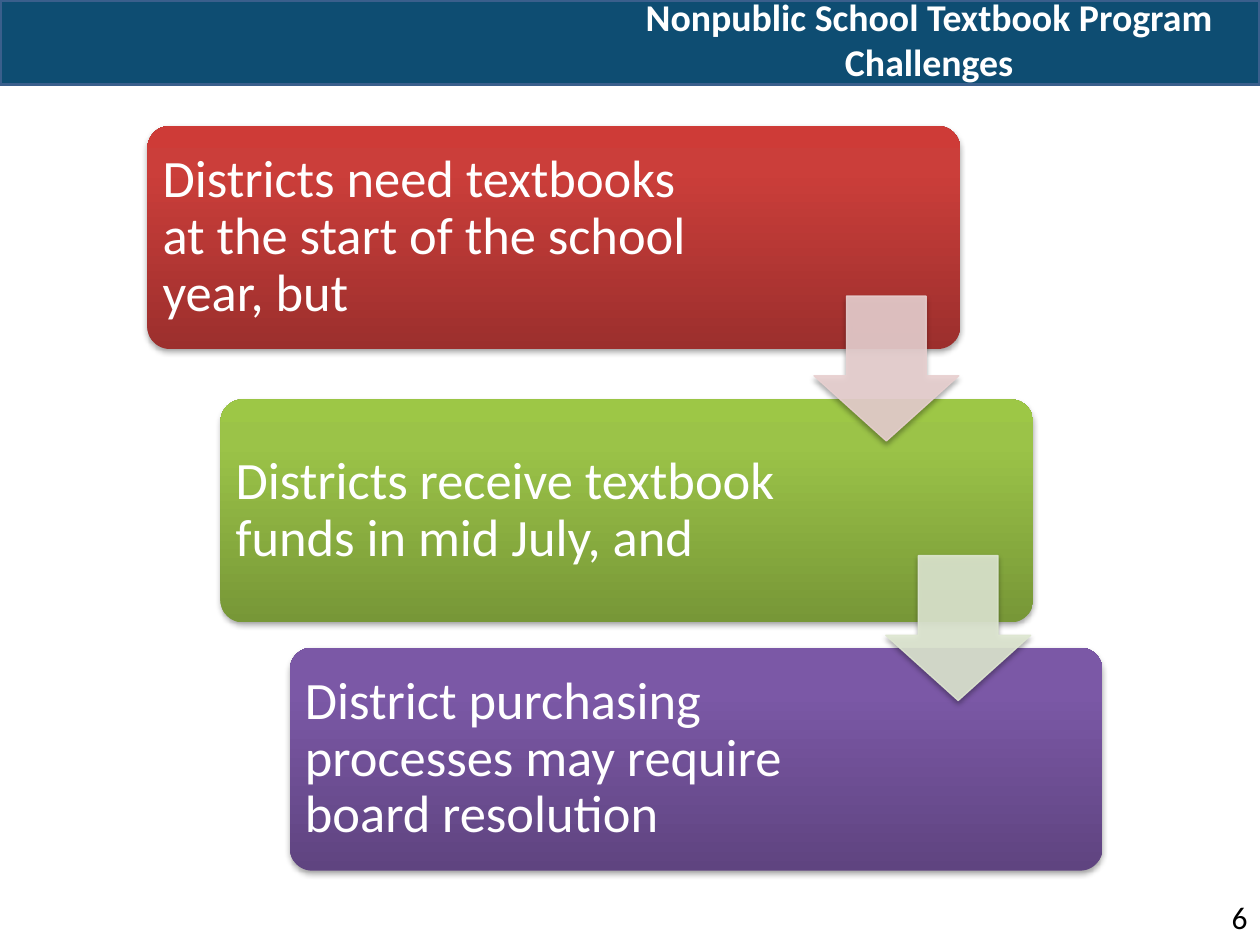
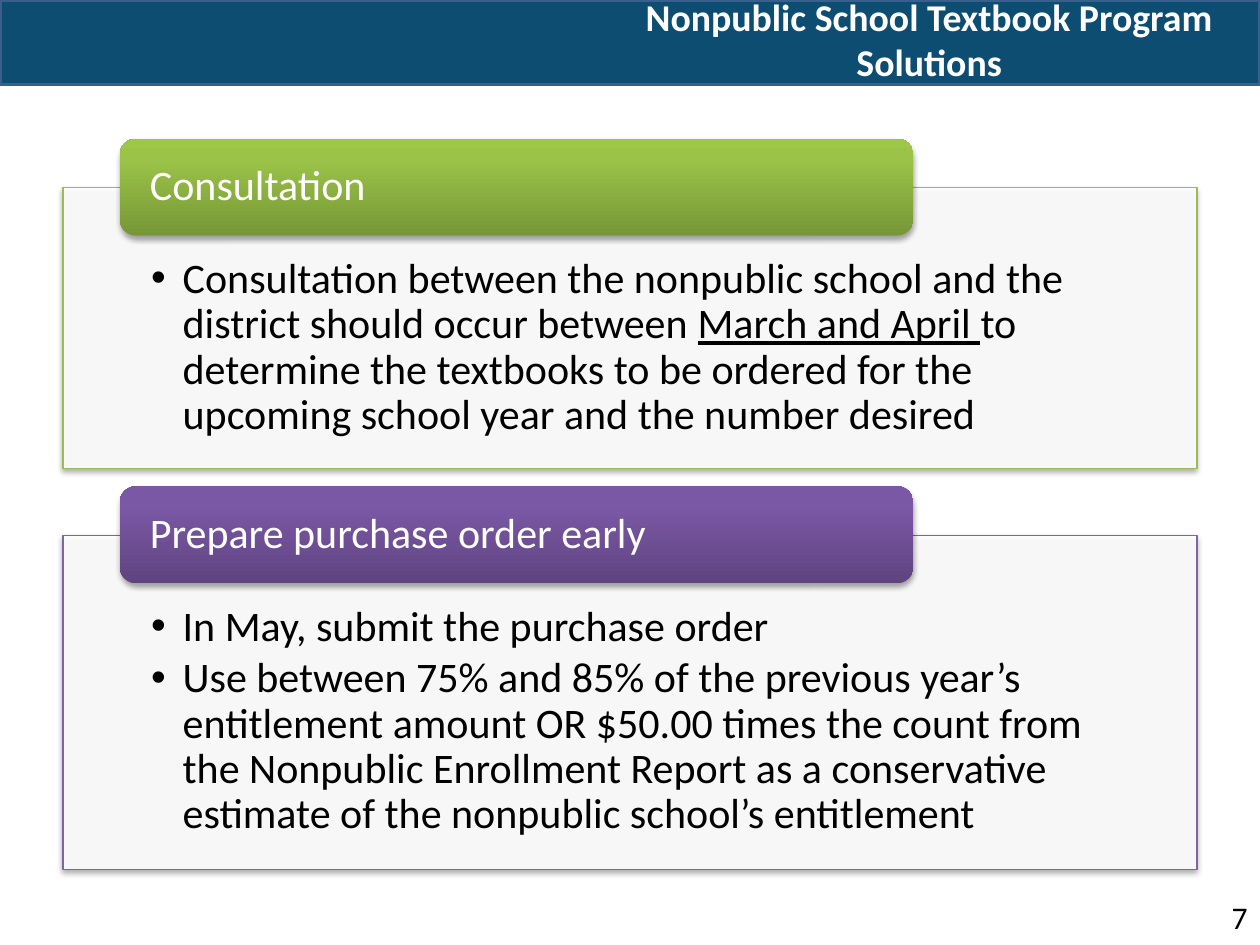
from lxml.etree import SubElement as Sub
from pptx import Presentation
from pptx.dml.color import RGBColor as Rgb
from pptx.enum.shapes import MSO_SHAPE as Kind
from pptx.enum.text import MSO_ANCHOR as Anchor, MSO_AUTO_SIZE as Auto, PP_ALIGN as Align
from pptx.oxml.ns import qn
from pptx.util import Inches, Pt

HUES = {
    "band": "0E4D72", "rim": "3A5F8C", "white": "FFFFFF", "black": "000000",
    "pink": "E8D0D0", "mint": "DEE7D1", "leaf": "9BBB59", "plum": "8064A2",
}
FADES = {
    "red": ("9C2F2D", "CB3E3A", "CE3B37"),
    "green": ("779737", "9BC348", "9DC746"),
    "purple": ("5F4480", "7B58A6", "7C57A8"),
}
COLS, ROWS = 40, 30


def kid(node, tag, **attrs):
    return Sub(node, qn(tag), {k: str(v) for k, v in attrs.items()})


def write(frame, text, size=24, hue="black", bold=None, align=None, anchor=Anchor.TOP,
          pad=(0.1, 0.05, 0.1, 0.05), lead=None, after=0, bullet=False):
    frame.word_wrap = True
    frame.auto_size = Auto.NONE
    frame.vertical_anchor = anchor
    (frame.margin_left, frame.margin_top,
     frame.margin_right, frame.margin_bottom) = map(Inches, pad)
    for i, parts in enumerate([text] if isinstance(text, str) else text):
        para = frame.add_paragraph() if i else frame.paragraphs[0]
        para.alignment, para.line_spacing = align, lead
        para.space_before, para.space_after = Pt(0), Pt(after)
        if bullet:
            props = para._p.get_or_add_pPr()
            props.set("marL", str(Inches(0.25)))
            props.set("indent", str(-Inches(0.25)))
            kid(props, "a:buChar", char="•")
        for j, part in enumerate([parts] if isinstance(parts, str) else parts):
            for k, line in enumerate(part.split("\v")):
                if k:
                    para.add_line_break()
                run = para.add_run()
                run.text = line
                font = run.font
                font.name, font.size, font.bold = "Calibri", Pt(size), bold
                font.color.rgb = Rgb.from_string(HUES[hue])
                if j % 2:
                    font.underline = True


class Deck:
    def __init__(self, first):
        self.prs = Presentation()
        self.prs.slide_width, self.prs.slide_height = Inches(10), Inches(7.5)
        self.num = first
        self.slide = None

    def at(self, x, y, w, h):
        wide, high = self.prs.slide_width / COLS, self.prs.slide_height / ROWS
        return [round(v) for v in (x * wide, y * high, w * wide, h * high)]

    def page(self, layout, topic):
        self.slide = self.prs.slides.add_slide(self.prs.slide_layouts[layout])
        title = self.slide.shapes.title
        self.move(title, 19, 0, 21, 2.48)
        write(title.text_frame, f"Nonpublic School Textbook Program\v{topic}", size=21.6,
              hue="white", bold=True, align=Align.CENTER, anchor=Anchor.MIDDLE)
        band = self.shape(Kind.RECTANGLE, 0, 0, 40, 2.68, fill="band", line="rim",
                          width=2, shade=False)
        title._element.addprevious(band._element)
        self.text(str(self.num), 37.32, 28.32, 2.68, 1.6, size=18, align=Align.RIGHT)
        self.num += 1

    def move(self, item, *box):
        item.left, item.top, item.width, item.height = self.at(*box)

    def text(self, text, *box, **fmt):
        write(self.slide.shapes.add_textbox(*self.at(*box)).text_frame, text, **fmt)

    def shape(self, kind, *box, fill, line=None, width=0.75, adj=(), alpha=None,
              dim=False, shade=True):
        item = self.slide.shapes.add_shape(kind, *self.at(*box))
        for i, val in enumerate(adj):
            item.adjustments[i] = val
        props = item._element.spPr
        if fill in FADES:
            item.fill.gradient()
            item.fill.gradient_angle = 90
            stops = props.find(".//" + qn("a:gsLst"))
            stops.clear()
            for pos, tone in zip((0, 80, 100), FADES[fill]):
                kid(kid(stops, "a:gs", pos=pos * 1000), "a:srgbClr", val=tone)
        else:
            item.fill.solid()
            item.fill.fore_color.rgb = Rgb.from_string(HUES[fill])
        if alpha:
            kid(props.find(".//" + qn("a:srgbClr")), "a:alpha", val=alpha * 1000)
        if line:
            item.line.color.rgb = Rgb.from_string(HUES[line])
            item.line.width = Pt(width)
            if dim:
                kid(item.line._ln.find(".//" + qn("a:srgbClr")), "a:alpha", val=alpha * 1000)
        else:
            item.line.fill.background()
        item.shadow.inherit = False
        if shade:
            cast = kid(props.find(qn("a:effectLst")), "a:outerShdw", blurRad=Pt(3.1),
                       dist=Pt(1.8), dir=5400000, rotWithShape=0)
            kid(kid(cast, "a:srgbClr", val=HUES["black"]), "a:alpha", val=35000)
        return item

    def step(self, text, x, y, fill, span):
        self.shape(Kind.ROUNDED_RECTANGLE, x, y, 25.8, 7.08, fill=fill, adj=[0.1])
        self.text(text, x, y, span, 7.08, size=30, hue="white", anchor=Anchor.MIDDLE,
                  pad=[0.12] * 4, lead=0.9)

    def arrow(self, x, y, hue):
        self.shape(Kind.DOWN_ARROW, x, y, 4.6, 4.6, fill=hue, line=hue,
                   adj=(0.55, 0.45), alpha=90, dim=True)

    def panel(self, slot, head, items, y, high, fill, line):
        box = 2, y, 36, high
        back = self.shape(Kind.RECTANGLE, *box, fill="white", line=line, alpha=90)
        body = self.slide.placeholders[slot]
        self.move(body, *box)
        write(body.text_frame, items, pad=(0.7, 0.55, 0.7, 0.19), lead=0.9,
              after=3.6, bullet=True)
        back._element.addnext(body._element)
        tab = 3.8, y - 1.56, 25.2, 3.08
        self.shape(Kind.ROUNDED_RECTANGLE, *tab, fill=fill)
        self.text(head, *tab, hue="white", anchor=Anchor.MIDDLE,
                  pad=(0.24, 0, 0.24, 0), lead=0.9)


def main():
    deck = Deck(6)

    deck.page(5, "Challenges")
    deck.step("Districts need textbooks at the start of the school year, but",
              4.68, 4, "red", 18.52)
    deck.step("Districts receive textbook funds in mid July, and",
              7, 12.68, "green", 18.88)
    deck.step("District purchasing processes may require board resolution",
              9.2, 20.56, "purple", 18.88)
    deck.arrow(25.84, 9.4, "pink")
    deck.arrow(28.12, 17.64, "mint")

    deck.page(3, "Solutions")
    deck.panel(1, "Consultation", [(
        "Consultation between the nonpublic school and the district should occur between ",
        "March and April ",
        "to determine the textbooks to be ordered for the upcoming school year "
        "and the number desired",
    )], 5.96, 8.92, "green", "leaf")
    deck.panel(2, "Prepare purchase order early", [
        "In May, submit the purchase order",
        "Use between 75% and 85% of the previous year’s entitlement amount OR $50.00 "
        "times the count from the Nonpublic Enrollment Report as a conservative "
        "estimate of the nonpublic school’s entitlement",
    ], 17, 10.6, "purple", "plum")
    for spare in list(deck.slide.placeholders):
        if not spare.text_frame.text:
            spare._element.getparent().remove(spare._element)

    deck.prs.save("out.pptx")


if __name__ == "__main__":
    main()
